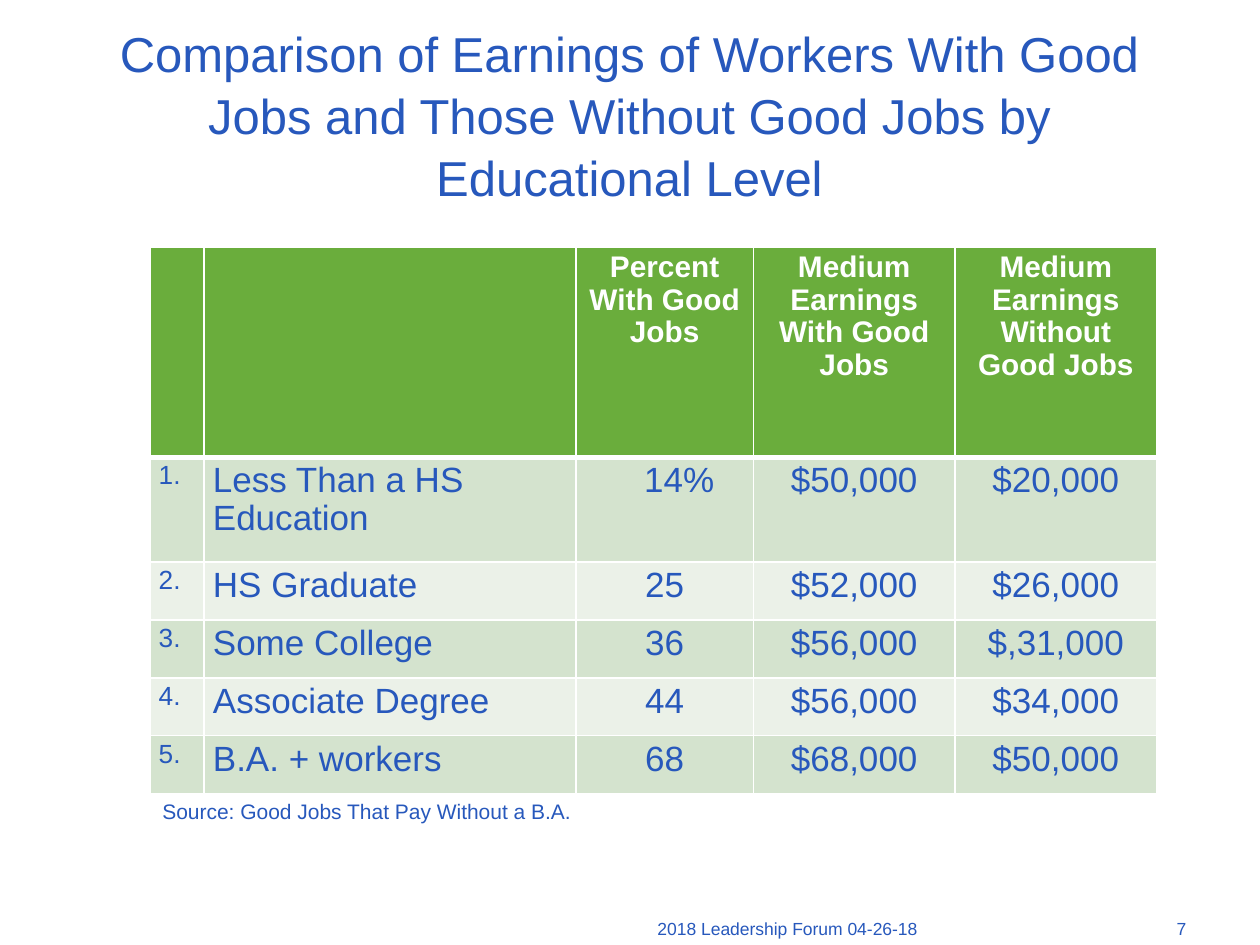
"""Build the slide comparing earnings of workers by educational level."""
from dataclasses import dataclass

from lxml import etree
from pptx import Presentation
from pptx.dml.color import RGBColor
from pptx.enum.text import MSO_ANCHOR, PP_ALIGN
from pptx.oxml.ns import qn
from pptx.util import Inches, Pt

LEFT, CENTER = PP_ALIGN.LEFT, PP_ALIGN.CENTER
TOP, MIDDLE = MSO_ANCHOR.TOP, MSO_ANCHOR.MIDDLE


@dataclass(frozen=True)
class Theme:
    font: str = "Arial"
    text: str = "2758BC"
    white: str = "FFFFFF"
    header_fill: str = "6AAD3C"
    band_fills: tuple = ("D4E3CE", "EBF1E8")
    title_size: int = 28
    header_size: int = 17
    body_size: int = 20
    number_size: int = 15
    source_size: int = 12
    footer_size: int = 10
    title_spacing: float = 1.05
    table_spacing: float = 0.97
    thin_line: int = 1
    thick_line: int = 3


HEADERS = (
    "", "", "Percent With Good Jobs",
    "Medium Earnings With Good Jobs", "Medium Earnings Without Good Jobs",
)
EARNINGS = (
    ("Less Than a HS Education", "14%", "$50,000", "$20,000"),
    ("HS Graduate", "25", "$52,000", "$26,000"),
    ("Some College", "36", "$56,000", "$,31,000"),
    ("Associate Degree", "44", "$56,000", "$34,000"),
    ("B.A. + workers", "68", "$68,000", "$50,000"),
)
COLUMN_WIDTHS = (0.43, 2.95, 1.41, 1.6, 1.6)
ROW_HEIGHTS = (1.67, 0.83, 0.46, 0.46, 0.46, 0.46)
PERCENT_INDENT = 0.3


class SlideBuilder:
    def __init__(self, slide, theme):
        self.slide = slide
        self.theme = theme

    def fill_text(self, frame, text, size, color=None, bold=False, align=LEFT, spacing=1.0):
        paragraph = frame.paragraphs[0]
        paragraph.alignment = align
        paragraph.line_spacing = spacing
        run = paragraph.add_run()
        run.text = text
        formats = {"name": self.theme.font, "size": Pt(size), "bold": bold}
        for name, value in formats.items():
            setattr(run.font, name, value)
        run.font.color.rgb = RGBColor.from_string(color or self.theme.text)

    def add_text(self, box, text, size, anchor=TOP, **formats):
        shape = self.slide.shapes.add_textbox(*map(Inches, box))
        shape.text_frame.word_wrap = True
        shape.text_frame.vertical_anchor = anchor
        self.fill_text(shape.text_frame, text, size, **formats)

    def add_borders(self, cell, top, bottom):
        thin = self.theme.thin_line
        properties = cell._tc.get_or_add_tcPr()
        for side, width in {"L": thin, "R": thin, "T": top, "B": bottom}.items():
            line = etree.SubElement(properties, qn(f"a:ln{side}"), w=str(Pt(width)))
            fill = etree.SubElement(line, qn("a:solidFill"))
            etree.SubElement(fill, qn("a:srgbClr"), val=self.theme.white)

    def style_cell(self, cell, row):
        theme = self.theme
        top = theme.thick_line if row == 1 else theme.thin_line
        bottom = theme.thick_line if row == 0 else theme.thin_line
        self.add_borders(cell, top, bottom)
        color = theme.band_fills[(row - 1) % 2] if row else theme.header_fill
        cell.fill.solid()
        cell.fill.fore_color.rgb = RGBColor.from_string(color)
        margins = {"left": 0.07, "right": 0.07, "top": 0.04, "bottom": 0.04}
        for side, value in margins.items():
            setattr(cell, f"margin_{side}", Inches(value))

    def add_table(self, left, top, headers, records):
        theme = self.theme
        rows = [headers] + [(f"{n}.", *record) for n, record in enumerate(records, 1)]
        table = self.slide.shapes.add_table(
            len(rows), len(headers), Inches(left), Inches(top),
            Inches(sum(COLUMN_WIDTHS)), Inches(sum(ROW_HEIGHTS)),
        ).table
        table.horz_banding = False
        for column, width in zip(table.columns, COLUMN_WIDTHS):
            column.width = Inches(width)
        for row, height in zip(table.rows, ROW_HEIGHTS):
            row.height = Inches(height)
        for r, values in enumerate(rows):
            for c, text in enumerate(values):
                cell = table.cell(r, c)
                self.style_cell(cell, r)
                if not text:
                    continue
                if text.endswith("%"):
                    cell.margin_left = Inches(PERCENT_INDENT)
                body_size = theme.body_size if c else theme.number_size
                self.fill_text(
                    cell.text_frame, text,
                    size=body_size if r else theme.header_size,
                    color=theme.text if r else theme.white,
                    bold=r == 0,
                    align=CENTER if c > 1 else LEFT,
                    spacing=theme.table_spacing,
                )


def main():
    presentation = Presentation()
    presentation.slide_width, presentation.slide_height = Inches(10), Inches(7.5)
    slide = presentation.slides.add_slide(presentation.slide_layouts[6])
    theme = Theme()
    builder = SlideBuilder(slide, theme)
    builder.add_text(
        (0.53, 0.43, 8.93, 0.94),
        "Comparison of Earnings of Workers With Good Jobs and "
        "Those Without Good Jobs by Educational Level",
        theme.title_size, anchor=MIDDLE, align=CENTER, spacing=theme.title_spacing,
    )
    builder.add_text(
        (5.12, 7.24, 4.13, 0.34), "2018 Leadership Forum 04-26-18", theme.footer_size
    )
    builder.add_text((9.24, 7.24, 0.57, 0.34), "7", theme.footer_size)
    builder.add_table(1.19, 1.96, HEADERS, EARNINGS)
    builder.add_text(
        (1.19, 6.29, 3.53, 0.3),
        "Source: Good Jobs That Pay Without a B.A.", theme.source_size,
    )
    presentation.save("out.pptx")


if __name__ == "__main__":
    main()
